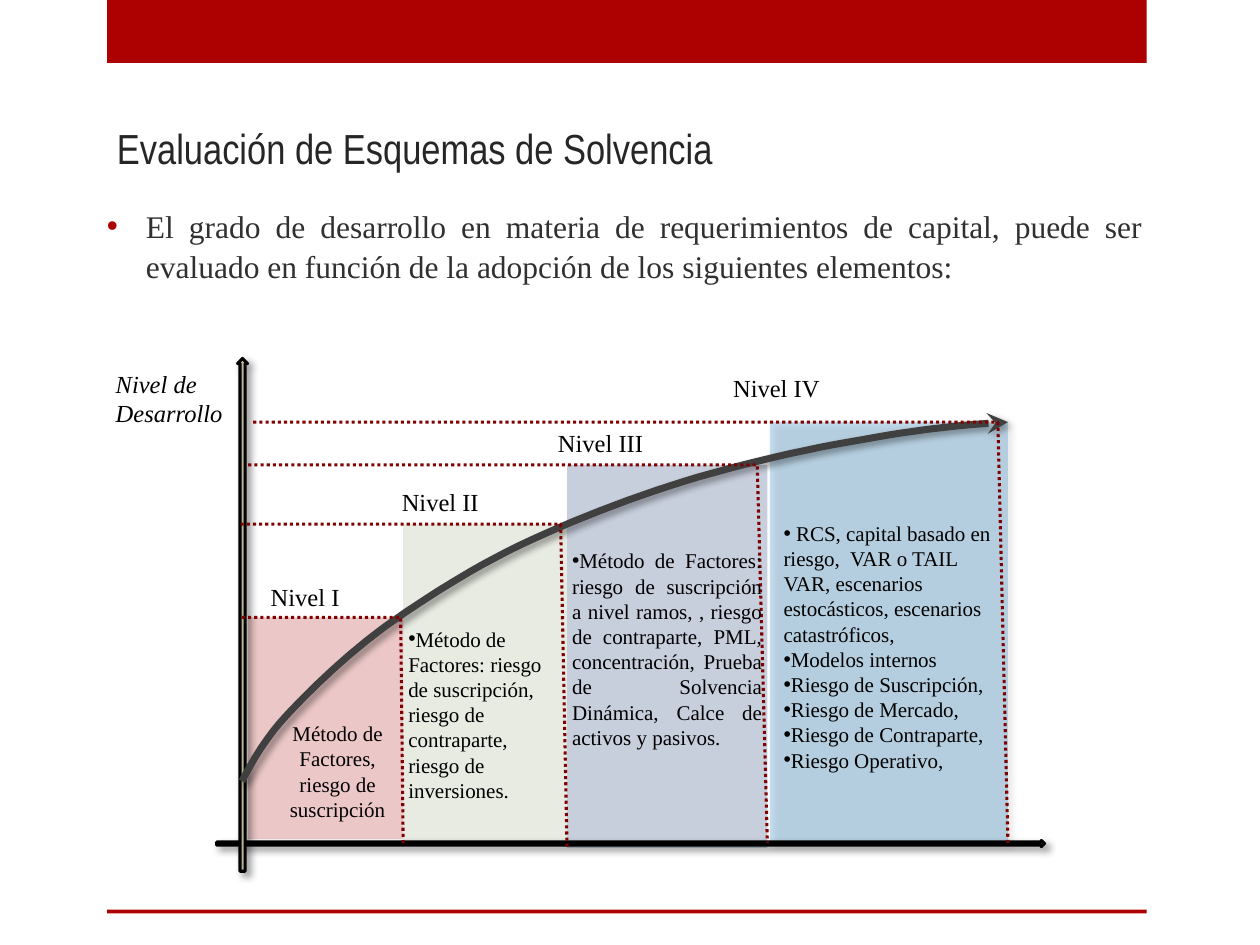
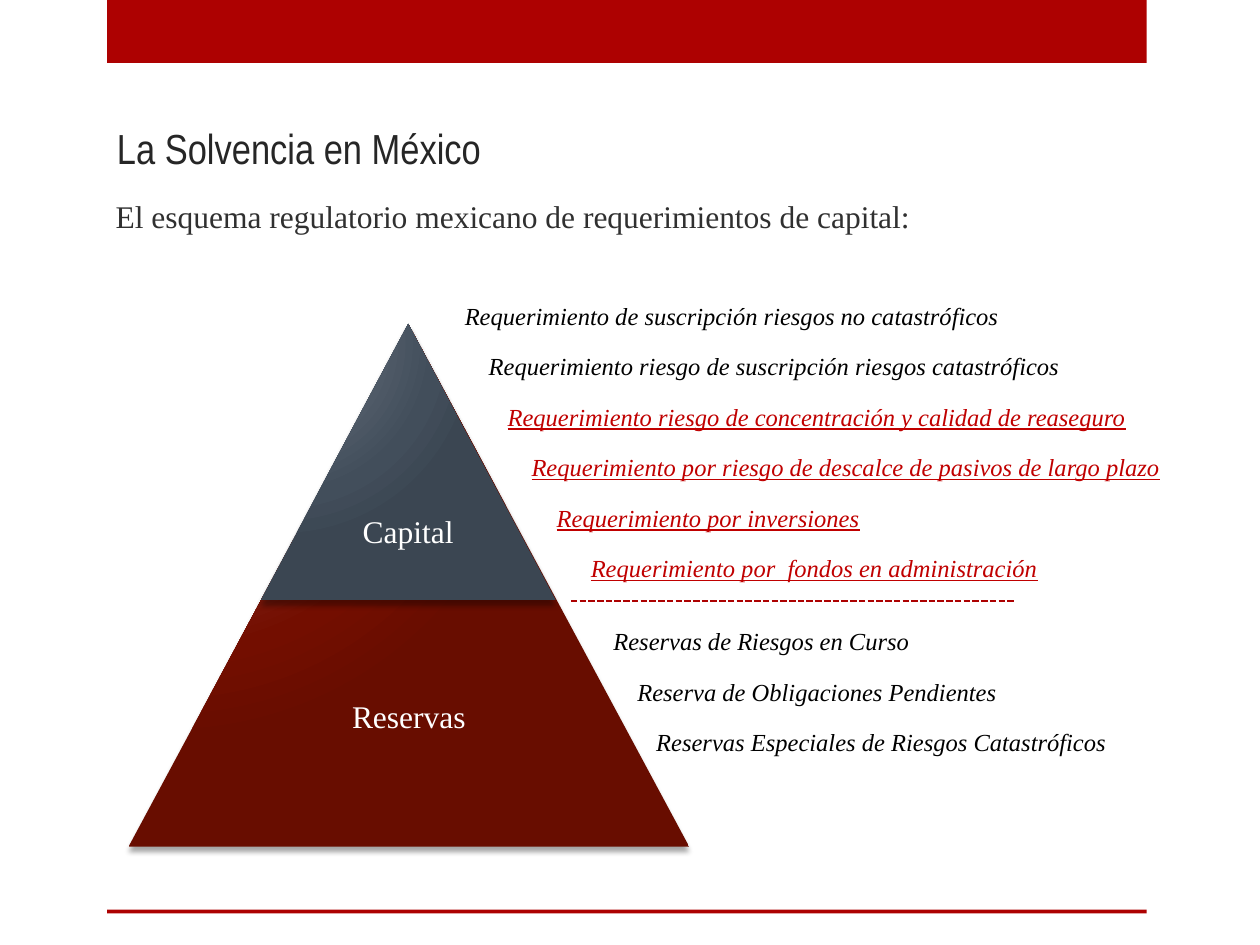
from lxml import etree
from pptx import Presentation, util as u
from pptx.dml.color import RGBColor
from pptx.enum import dml, shapes, text
from pptx.oxml.ns import qn

PX = 9144  # one px is a hundredth of an inch
RED, WINE, BLACK, GREY = "AD0101", "800101", "000000", "303030"
SERIF, NARROW = "Times New Roman", "Arial Narrow"
LEFT, CENTER, JUSTIFY = text.PP_ALIGN.LEFT, text.PP_ALIGN.CENTER, text.PP_ALIGN.JUSTIFY
SOFT = (40, 4, 3, 45)   # shadow: alpha, blur, distance, angle
DROP = (35, 3, 3, 90)
DOTS, DASHES = dml.MSO_LINE.ROUND_DOT, dml.MSO_LINE.SQUARE_DOT


def rgb(code):
    return RGBColor.from_string(code)


def sub(node, tag, **attrs):
    return etree.SubElement(node, qn("a:" + tag), {k: str(v) for k, v in attrs.items()})


def bezier(start, parts, steps=12):
    """Points along a chain of cubic curves."""
    pts = [start]
    for b, c, d in parts:
        a = pts[-1]
        for i in range(1, steps + 1):
            t = i / steps
            s = 1 - t
            pts.append(tuple(s**3 * p + 3 * s * s * t * q + 3 * s * t * t * r + t**3 * v
                             for p, q, r, v in zip(a, b, c, d)))
    return pts


class Deck:
    def __init__(self):
        self.prs = Presentation()
        self.prs.slide_width, self.prs.slide_height = 1000 * PX, 750 * PX
        self.slide = None

    def page(self, title):
        self.slide = self.prs.slides.add_slide(self.prs.slide_layouts[6])
        self.shape("RECTANGLE", (85, 0, 825, 50), RED)
        self.shape("RECTANGLE", (85, 722, 825, 3), RED)
        self.text((83, 50, 742, 92), [title], 24, "262626", font=NARROW, base=True)

    def shade(self, item, shadow):
        item.shadow.inherit = False
        if shadow:
            alpha, blur, dist, angle = shadow
            fx = item._element.spPr.find(qn("a:effectLst"))
            outer = sub(fx, "outerShdw", blurRad=u.Pt(blur), dist=u.Pt(dist),
                        dir=angle * 60000, algn="ctr", rotWithShape=0)
            sub(sub(outer, "srgbClr", val=BLACK), "alpha", val=alpha * 1000)

    def stroke(self, line, color, width, dash=None):
        line.color.rgb = rgb(color)
        line.width = u.Pt(width)
        if dash:
            line.dash_style = dash

    def shape(self, kind, box, color, alpha=None, line=None, shadow=None, turn=0):
        item = self.slide.shapes.add_shape(shapes.MSO_SHAPE[kind], *[v * PX for v in box])
        item.rotation = turn
        item.fill.solid()
        item.fill.fore_color.rgb = rgb(color)
        if alpha:
            sub(item._element.spPr.find(qn("a:solidFill"))[0], "alpha", val=alpha * 1000)
        if line:
            self.stroke(item.line, *line)
        else:
            item.line.fill.background()
        self.shade(item, shadow)
        return item

    def cone(self, box, label, stops):
        """Triangle with a radial gradient and a centred label."""
        item = self.shape("ISOSCELES_TRIANGLE", box, stops[-1], shadow=DROP)
        props = item._element.spPr
        grad = etree.Element(qn("a:gradFill"), rotWithShape="1")
        props.replace(props.find(qn("a:solidFill")), grad)
        list_ = sub(grad, "gsLst")
        for pos, color in zip((0, 76, 100), stops):
            sub(sub(list_, "gs", pos=pos * 1000), "srgbClr", val=color)
        sub(sub(grad, "path", path="circle"), "fillToRect", l=15000, t=15000, r=100000, b=100000)
        frame = item.text_frame
        frame.vertical_anchor = text.MSO_ANCHOR.MIDDLE
        self.para(frame.paragraphs[0], label, 18, "FFFFFF", align=CENTER)

    def path_line(self, pts, color, width, dash=None, arrow=None, shadow=None):
        pts = [(x * 10, y * 10) for x, y in pts]
        pen = self.slide.shapes.build_freeform(*pts[0], scale=PX / 10)
        pen.add_line_segments(pts[1:], close=False)
        item = pen.convert_to_shape()
        item.fill.background()
        self.stroke(item.line, color, width, dash)
        if arrow:
            sub(item.line._get_or_add_ln(), "tailEnd", type=arrow)
        self.shade(item, shadow)

    def rule(self, x1, y1, x2, y2, color, width, dash):
        item = self.slide.shapes.add_connector(
            shapes.MSO_CONNECTOR.STRAIGHT, *[v * PX for v in (x1, y1, x2, y2)])
        self.stroke(item.line, color, width, dash)
        sub(item._element.spPr, "effectLst")

    def para(self, p, words, size, color, align=LEFT, font=SERIF, italic=False, under=False,
             mark=None, indent=(0, 0)):
        """Fill one paragraph; mark is the bullet colour, indent is (margin, first line)."""
        p.text = words
        p.alignment = align
        props = p._p.get_or_add_pPr()
        props.set("marL", str(indent[0] * PX))
        props.set("indent", str(indent[1] * PX))
        if mark:
            sub(sub(props, "buClr"), "srgbClr", val=mark)
            sub(props, "buFont", typeface="Arial")
            sub(props, "buChar", char="•")
        f = p.font
        f.name, f.size, f.italic, f.underline = font, u.Pt(size), italic, under
        f.color.rgb = rgb(color)

    def text(self, box, lines, size, color=BLACK, pad=10, base=False, gap=0, lead=None, **style):
        """A line is a string, or a (string, style) pair."""
        frame = self.slide.shapes.add_textbox(*[v * PX for v in box]).text_frame
        frame.word_wrap = True
        frame.margin_left = frame.margin_right = pad * PX
        frame.margin_top = frame.margin_bottom = 5 * PX
        if base:
            frame.vertical_anchor = text.MSO_ANCHOR.BOTTOM
        for i, line in enumerate(lines):
            words, extra = (line, {}) if isinstance(line, str) else line
            p = frame.add_paragraph() if i else frame.paragraphs[0]
            self.para(p, words, size, **{"color": color, **style, **extra})
            p.space_before, p.space_after = u.Pt(gap if i else 0), u.Pt(gap)
            if lead:
                p.line_spacing = lead


# band, colour, guide (start x, y, bend x, foot x, foot y), name, name box
LEVELS = [
    ((197, 490, 123, 176), RED, (192, 490, 318, 320, 671), "Nivel I", (205, 457, 82, 34)),
    ((320, 416, 130, 253), "98A47C", (191, 416, 445, 450, 672), "Nivel II", (309, 382, 82, 34)),
    ((450, 369, 159, 304), "002060", (197, 369, 601, 609, 669), "Nivel III", (433, 335, 92, 34)),
    ((611, 335, 189, 335), "0070C0", (201, 335, 792, 800, 669), "Nivel IV", (572, 291, 100, 34)),
]
NOTES = [
    ((216, 567, 104, 91), ["Método de Factores, riesgo de suscripción"], {"align": CENTER}),
    ((320, 492, 129, 151), ["Método de Factores: riesgo de suscripción, riesgo de contraparte, "
                            "riesgo de inversiones."], {"pad": 4, "mark": BLACK}),
    ((450, 430, 159, 172), ["Método de Factores: riesgo de suscripción a nivel ramos, , riesgo de "
                            "contraparte, PML, concentración, Prueba de Solvencia Dinámica, "
                            "Calce de activos y pasivos."],
     {"pad": 4, "mark": BLACK, "align": JUSTIFY}),
    ((612, 408, 188, 212), [" RCS, capital basado en riesgo,  VAR o TAIL VAR, escenarios "
                            "estocásticos, escenarios catastróficos,", "Modelos internos",
                            "Riesgo de Suscripción,", "Riesgo de Mercado,",
                            "Riesgo de Contraparte,", "Riesgo Operativo,"], {"mark": BLACK}),
]
GROWTH = [
    ((201, 603), (211, 585), (230, 565)), ((250, 544), (276, 519), (306, 497)),
    ((337, 475), (373, 452), (412, 433)), ((452, 414), (498, 396), (543, 382)),
    ((589, 368), (641, 356), (684, 349)), ((727, 341), (764, 337), (800, 335)),
]
# words, left indent, stressed
NEEDS = [
    ("Requerimiento de suscripción riesgos no catastróficos", 0, False),
    ("Requerimiento riesgo de suscripción riesgos catastróficos", 19, False),
    ("Requerimiento riesgo de concentración y calidad de reaseguro", 34, True),
    ("Requerimiento por riesgo de descalce de pasivos de largo plazo", 53, True),
    ("Requerimiento por inversiones", 73, True),
    ("Requerimiento por  fondos en administración", 100, True),
]
FUNDS = [
    ("Reservas de Riesgos en Curso", 0, False),
    ("Reserva de Obligaciones Pendientes", 19, False),
    ("Reservas Especiales de Riesgos Catastróficos", 34, False),
]


def levels(deck):
    deck.page("Evaluación de Esquemas de Solvencia")
    for band, color, *_ in LEVELS:
        deck.shape("RECTANGLE", band, color, alpha=22,
                   shadow=SOFT if band is LEVELS[-1][0] else None)
    deck.text((67, 158, 850, 63),
              ["El grado de desarrollo en materia de requerimientos de capital, puede ser "
               "evaluado en función de la adopción de los siguientes elementos:"],
              18, GREY, align=JUSTIFY, mark=RED, indent=(39, -31), lead=1.05)
    for box, turn in (((172, 667, 657, 5), 0), ((-11, 484, 407, 8), 270)):
        deck.shape("RIGHT_ARROW", box, "B8B592", line=(BLACK, 1.75), shadow=SOFT, turn=turn)
    deck.path_line(bezier((192, 620), GROWTH), "404040", 4, arrow="stealth", shadow=SOFT)
    for _, _, (x, y, bend, foot, low), name, box in LEVELS:
        deck.path_line([(x, y), (bend, y), (foot, low)], WINE, 1.75, DOTS)
        deck.text(box, [name], 14)
    for box, lines, style in NOTES:
        deck.text(box, lines, 12, **style)
    deck.text((82, 288, 106, 57), ["Nivel de Desarrollo"], 14, italic=True)


def pyramid(deck):
    deck.page("La Solvencia en México")
    deck.text((75, 150, 850, 40), ["El esquema regulatorio mexicano de requerimientos de capital:"],
              18, GREY, align=JUSTIFY, indent=(7, 0), lead=1.05)
    deck.cone((102, 258, 445, 414), "Reservas", ("9F5554", "730E00", "680D00"))
    deck.cone((207, 257, 234, 219), "Capital", ("6D7784", "424E5B", "3B4652"))
    deck.rule(453, 477, 805, 477, RED, 1.25, DASHES)
    for box, rows in (((477, 492, 414, 114), FUNDS), ((359, 234, 578, 236), NEEDS)):
        lines = [(words, {"indent": (left, 0), "under": hot, "color": "C00000" if hot else BLACK})
                 for words, left, hot in rows]
        deck.text(box, lines, 14, gap=6, italic=True)


def main():
    deck = Deck()
    levels(deck)
    pyramid(deck)
    deck.prs.save("out.pptx")


if __name__ == "__main__":
    main()
